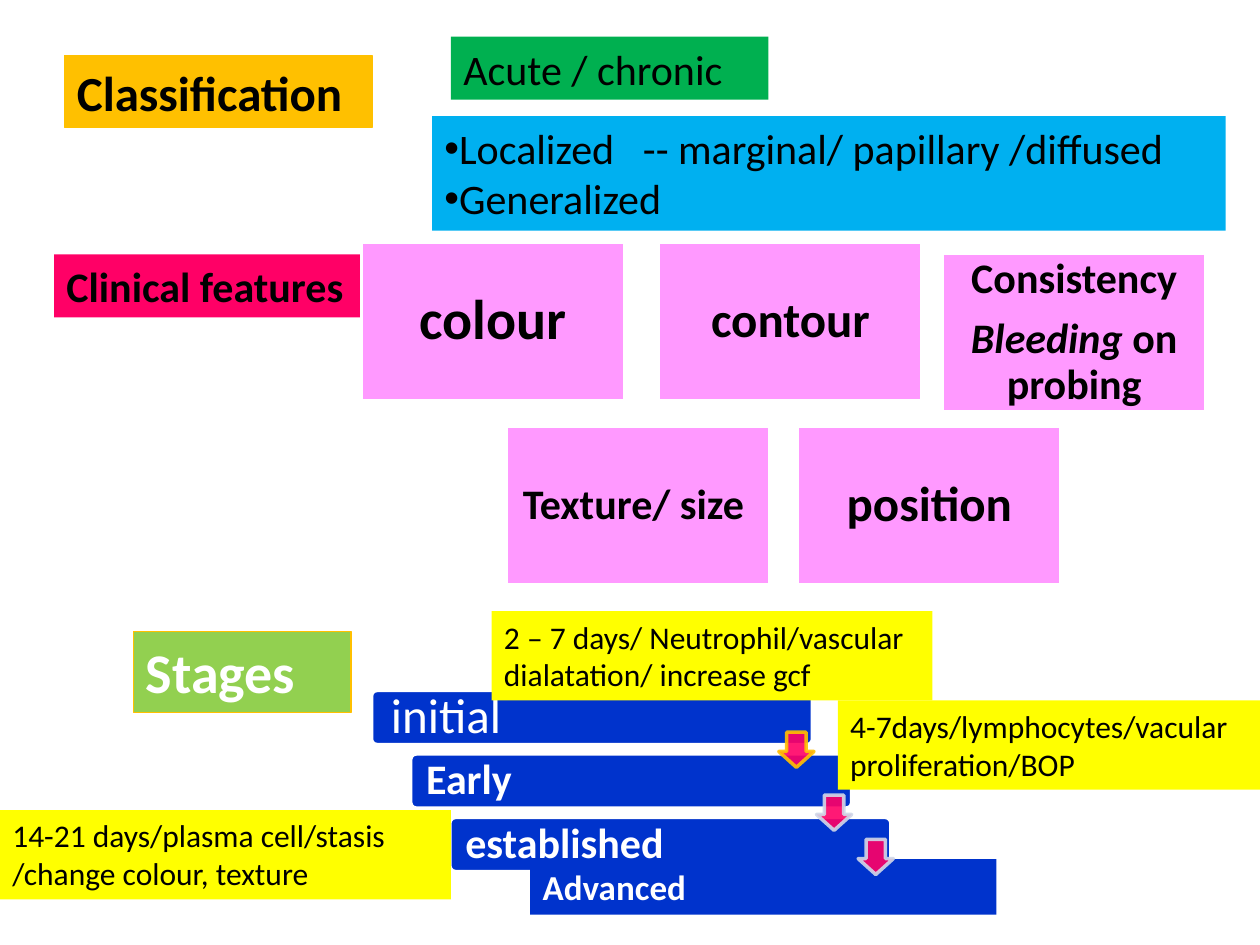
from lxml import etree
from pptx import Presentation
from pptx import util as u
from pptx.dml import color
from pptx.enum import shapes, text
from pptx.oxml import ns

COLORS = {
    "black": "000000", "white": "FFFFFF", "amber": "FFC000", "rose": "FF0066",
    "lime": "92D050", "green": "00B050", "sky": "00B0F0", "pink": "FF99FF",
    "blue": "0033CC", "yellow": "FFFF00", "mist": "D0D8E8",
}
RECT = shapes.MSO_SHAPE.RECTANGLE
LEFT, CENTER = text.PP_ALIGN.LEFT, text.PP_ALIGN.CENTER
TOP, MIDDLE = text.MSO_ANCHOR.TOP, text.MSO_ANCHOR.MIDDLE


def rgb(name):
    return color.RGBColor.from_string(COLORS[name])


def paint(sp, fill, line=None, width=0.75):
    sp.shadow.inherit = False
    sp.fill.solid()
    sp.fill.fore_color.rgb = rgb(fill)
    if line:
        sp.line.color.rgb = rgb(line)
        sp.line.width = u.Pt(width)
    else:
        sp.line.fill.background()


def place(sp, box):
    sp.left, sp.top, sp.width, sp.height = (u.Cm(v) for v in box)


def format_run(r, size, ink="black", bold=False, italic=False):
    f = r.font
    f.name, f.size, f.bold, f.italic = "Calibri", u.Pt(size), bold, italic
    f.color.rgb = rgb(ink)


def write(sp, words, size, ink="black", bold=False, align=LEFT, anchor=TOP,
          pad=(0.25, 0.13), spacing=1.0):
    tf = sp.text_frame
    tf.text = words
    tf.word_wrap = True
    tf.auto_size = text.MSO_AUTO_SIZE.NONE
    tf.vertical_anchor = anchor
    tf.margin_left = tf.margin_right = u.Cm(pad[0])
    tf.margin_top = tf.margin_bottom = u.Cm(pad[1])
    for p in tf.paragraphs:
        p.alignment = align
        p.line_spacing = spacing
        p.space_before = u.Pt(0)
        for r in p.runs:
            format_run(r, size, ink, bold)
    return tf


def add_box(s, box, fill, line=None, width=0.75, kind=RECT):
    sp = s.shapes.add_shape(kind, *(u.Cm(v) for v in box))
    paint(sp, fill, line, width)
    return sp


def add_bullet(p, tab):
    pPr = p._p.get_or_add_pPr()
    pPr.set("marL", "0")
    pPr.set("indent", "0")
    etree.SubElement(pPr, ns.qn("a:buFont")).set("typeface", "Arial")
    etree.SubElement(pPr, ns.qn("a:buChar")).set("char", "•")
    tabs = etree.SubElement(pPr, ns.qn("a:tabLst"))
    stop = etree.SubElement(tabs, ns.qn("a:tab"))
    stop.set("pos", str(u.Cm(tab)))
    stop.set("algn", "l")


def add_arrow(s, x, y, line):
    sp = add_box(s, (x, y, 0.71, 0.71), "rose", line, 2, shapes.MSO_SHAPE.DOWN_ARROW)
    sp.adjustments[0], sp.adjustments[1] = 0.55, 0.45
    for clr in sp._element.spPr.iter(ns.qn("a:srgbClr")):
        etree.SubElement(clr, ns.qn("a:alpha")).set("val", "90000")


def classification(s, x, y):
    title = s.shapes.title
    place(title, (x, y + 0.38, 6.2, 1.45))
    paint(title, "amber", "amber")
    write(title, "Classification", 28, bold=True)

    course = add_box(s, (x + 7.79, y, 6.4, 1.27), "green")
    write(course, "Acute / chronic", 24)

    extent = s.placeholders[1]
    place(extent, (x + 7.41, y + 1.6, 16, 2.31))
    paint(extent, "sky")
    tf = write(extent, "Localized\t-- marginal/ papillary /diffused\nGeneralized", 24)
    for p in tf.paragraphs:
        add_bullet(p, 4)


def clinical_features(s, x, y):
    label = add_box(s, (x, y + 0.25, 6.6, 1.27), "rose")
    write(label, "Clinical features", 24, bold=True)
    cards = [
        ("colour", 32, 6.2, 0),
        ("contour", 28, 12.19, 0),
        ("Consistency\nBleeding ", 24, 17.91, 0.23),
        ("Texture/ size ", 24, 9.12, 3.71),
        ("position", 28, 14.99, 3.71),
    ]
    for words, size, dx, dy in cards:
        card = add_box(s, (x + dx, y + dy, 5.31, 3.2), "pink", "white", 2)
        tf = write(card, words, size, bold=True, align=CENTER, anchor=MIDDLE,
                   pad=(0.25, 0.25), spacing=0.9)
        if len(tf.paragraphs) > 1:
            first, last = tf.paragraphs
            first.space_after = u.Pt(8.4)
            last.runs[0].font.italic = True
            r = last.add_run()
            r.text = "on probing"
            format_run(r, size, bold=True)


def stages(s, x, y):
    label = add_box(s, (x + 2.69, y + 0.41, 4.39, 1.63), "lime", "amber")
    write(label, "Stages", 32, "white", True)

    bars = [("initial", 28, False, 0.36), ("Early", 24, True, 0.28),
            ("established", 24, True, 0.28)]
    for i, (words, size, bold, pad) in enumerate(bars):
        bar = add_box(s, (x + 7.49 + 0.79 * i, y + 1.6 + 1.28 * i, 8.89, 1.09),
                      "blue", "white", 2, shapes.MSO_SHAPE.ROUNDED_RECTANGLE)
        bar.adjustments[0] = 0.1
        write(bar, words, size, "white", bold, anchor=MIDDLE,
              pad=(pad, pad), spacing=0.9)
    add_arrow(s, x + 15.7, y + 2.44, "amber")
    add_arrow(s, x + 16.46, y + 3.71, "mist")

    advanced = add_box(s, (x + 10.69, y + 5, 9.4, 1.12), "blue")
    write(advanced, "Advanced", 20, "white", True)
    add_arrow(s, x + 17.3, y + 4.6, "mist")

    notes = [
        ("2 – 7 days/ Neutrophil/vascular dialatation/ increase gcf", 9.91, 0, 8.89),
        ("4-7days/lymphocytes/vacular proliferation/BOP", 16.89, 1.8, 8.51),
        ("14-21 days/plasma cell/stasis /change colour, texture", 0, 4.01, 9.09),
    ]
    for words, dx, dy, w in notes:
        note = add_box(s, (x + dx, y + dy, w, 1.8), "yellow")
        write(note, words, 18)


def main():
    prs = Presentation()
    prs.slide_width, prs.slide_height = u.Cm(25.4), u.Cm(19.05)
    s = prs.slides.add_slide(prs.slide_layouts[1])
    classification(s, 1.3, 0.74)
    clinical_features(s, 1.09, 4.88)
    stages(s, 0, 12.32)
    prs.save("out.pptx")


if __name__ == "__main__":
    main()
